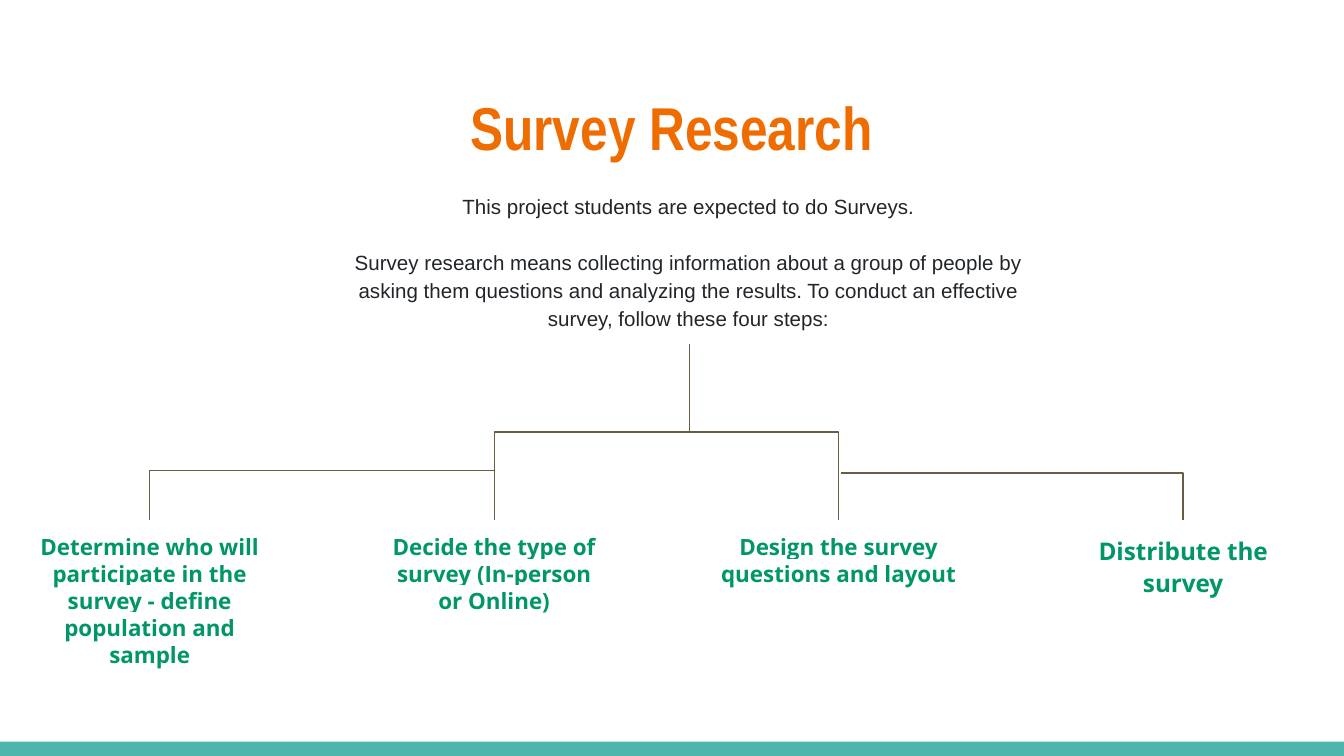
import pptx
import pptx.dml.color
import pptx.enum.shapes
import pptx.enum.text
import pptx.oxml.ns
import pptx.util
from dataclasses import dataclass
from lxml import etree

Cm = pptx.util.Cm
Pt = pptx.util.Pt
qn = pptx.oxml.ns.qn
ELBOW = pptx.enum.shapes.MSO_CONNECTOR.ELBOW
TOP = pptx.enum.text.MSO_ANCHOR.TOP
MIDDLE = pptx.enum.text.MSO_ANCHOR.MIDDLE


@dataclass(frozen=True)
class Theme:
    title_color: str = "EF6C00"
    body_color: str = "212529"
    step_color: str = "009668"
    line_color: str = "695D46"
    bar_color: str = "4DB6AC"
    paper: str = "FFFFFF"
    title_font: str = "Arial Narrow"
    body_font: str = "Arial"
    step_font: str = "Open Sans"
    title_size: float = 32.4
    body_size: float = 11
    step_size: float = 12
    last_step_size: float = 13
    line_width: float = 0.75


def rgb(value):
    return pptx.dml.color.RGBColor.from_string(value)


def write(p, text, *, font, size, color, bold=False, highlight=None,
          line_spacing=None, before=0, after=0):
    """Fill a centred paragraph; a newline in the text is a line break."""
    p.alignment = pptx.enum.text.PP_ALIGN.CENTER
    p.space_before, p.space_after = Pt(before), Pt(after)
    if line_spacing:
        p.line_spacing = line_spacing
    for i, line in enumerate(text.split("\n")):
        if i:
            p.add_line_break()
        r = p.add_run()
        r.text = line
        r.font.name, r.font.size, r.font.bold = font, Pt(size), bold
        r.font.color.rgb = rgb(color)
        if highlight:
            mark = etree.Element(qn("a:highlight"))
            etree.SubElement(mark, qn("a:srgbClr"), val=highlight)
            r.font._element.find(qn("a:solidFill")).addnext(mark)


class Deck:
    def __init__(self, theme, s):
        self.theme, self.s = theme, s

    def bar(self, x, y, w, h):
        sp = self.s.shapes.add_shape(
            pptx.enum.shapes.MSO_SHAPE.RECTANGLE, Cm(x), Cm(y), Cm(w), Cm(h))
        sp.shadow.inherit = False
        sp.fill.solid()
        sp.fill.fore_color.rgb = rgb(self.theme.bar_color)
        sp.line.fill.background()

    def text(self, x, y, w, h, anchor=TOP):
        """Add an empty wrapping box and return its text frame."""
        tf = self.s.shapes.add_textbox(Cm(x), Cm(y), Cm(w), Cm(h)).text_frame
        tf.word_wrap = True
        tf.vertical_anchor = anchor
        tf.margin_left = tf.margin_right = Cm(0.25)
        tf.margin_top = tf.margin_bottom = Cm(0.25)
        return tf

    def connector(self, x0, y0, x1, y1):
        c = self.s.shapes.add_connector(ELBOW, Cm(x0), Cm(y0), Cm(x1), Cm(y1))
        c.line.color.rgb = rgb(self.theme.line_color)
        c.line.width = Pt(self.theme.line_width)
        etree.SubElement(c._element.spPr, qn("a:effectLst"))
        return c

    def branch(self, x0, y0, x1, y1):
        """Connect down, across and down: an elbow turned a quarter."""
        mid_x, mid_y = (x0 + x1) / 2, (y0 + y1) / 2
        half_w, half_h = (y1 - y0) / 2, abs(x1 - x0) / 2
        side = 1 if x1 > x0 else -1
        c = self.connector(mid_x + side * half_w, mid_y - half_h,
                           mid_x - side * half_w, mid_y + half_h)
        c._element.spPr.find(qn("a:xfrm")).rot = 270 if side > 0 else 90

    def corner(self, x0, y0, x1, y1):
        """Connect across and then down."""
        c = self.connector(x0, y0, x1, y1)
        c._element.spPr.find(qn("a:prstGeom")).set("prst", "bentConnector2")


def main():
    prs = pptx.Presentation()
    prs.slide_width, prs.slide_height = Cm(25.4), Cm(14.29)
    theme = Theme()
    deck = Deck(theme, prs.slides.add_slide(prs.slide_layouts[6]))

    deck.bar(0, 14.02, 25.4, 0.27)
    title = deck.text(0.86, 1.4, 23.67, 1.96, anchor=MIDDLE)
    write(title.paragraphs[0], "Survey Research", font=theme.title_font,
          size=theme.title_size, color=theme.title_color, bold=True)

    body = dict(font=theme.body_font, size=theme.body_size,
                color=theme.body_color, highlight=theme.paper,
                line_spacing=1.15)
    intro = deck.text(6.4, 3.35, 13.23, 3.15)
    write(intro.paragraphs[0],
          "This project students are expected to do Surveys.", **body)
    write(intro.add_paragraph(),
          "Survey research means collecting information about a group of "
          "people by asking them questions and analyzing the results. To "
          "conduct an effective survey, follow these four steps:",
          before=14.6, **body)

    regular = dict(size=theme.step_size, after=12)
    last = dict(size=theme.last_step_size, line_spacing=1.1,
                before=13, after=7)
    steps = [
        ("Determine who will participate in the survey - define population "
         "and sample", 3.07, regular),
        ("Decide the type of survey (In-person\nor Online)", 2.06, regular),
        ("Design the survey questions and layout", 1.55, regular),
        ("Distribute the survey", 1.68, last),
    ]
    step_y, step_w, pitch = 9.83, 5, 6.51
    centers = [2.83 + i * pitch for i in range(len(steps))]
    for center, (text, height, style) in zip(centers, steps):
        tf = deck.text(center - step_w / 2, step_y, step_w, height)
        write(tf.paragraphs[0], text, font=theme.step_font,
              color=theme.step_color, bold=True, highlight=theme.paper,
              **style)

    for center in centers[1:3]:
        deck.branch(13.03, 6.5, center, step_y)
    deck.corner(15.9, 8.94, centers[3], step_y)
    deck.corner(centers[1], 8.89, centers[0], step_y)

    prs.save("out.pptx")


if __name__ == "__main__":
    main()
